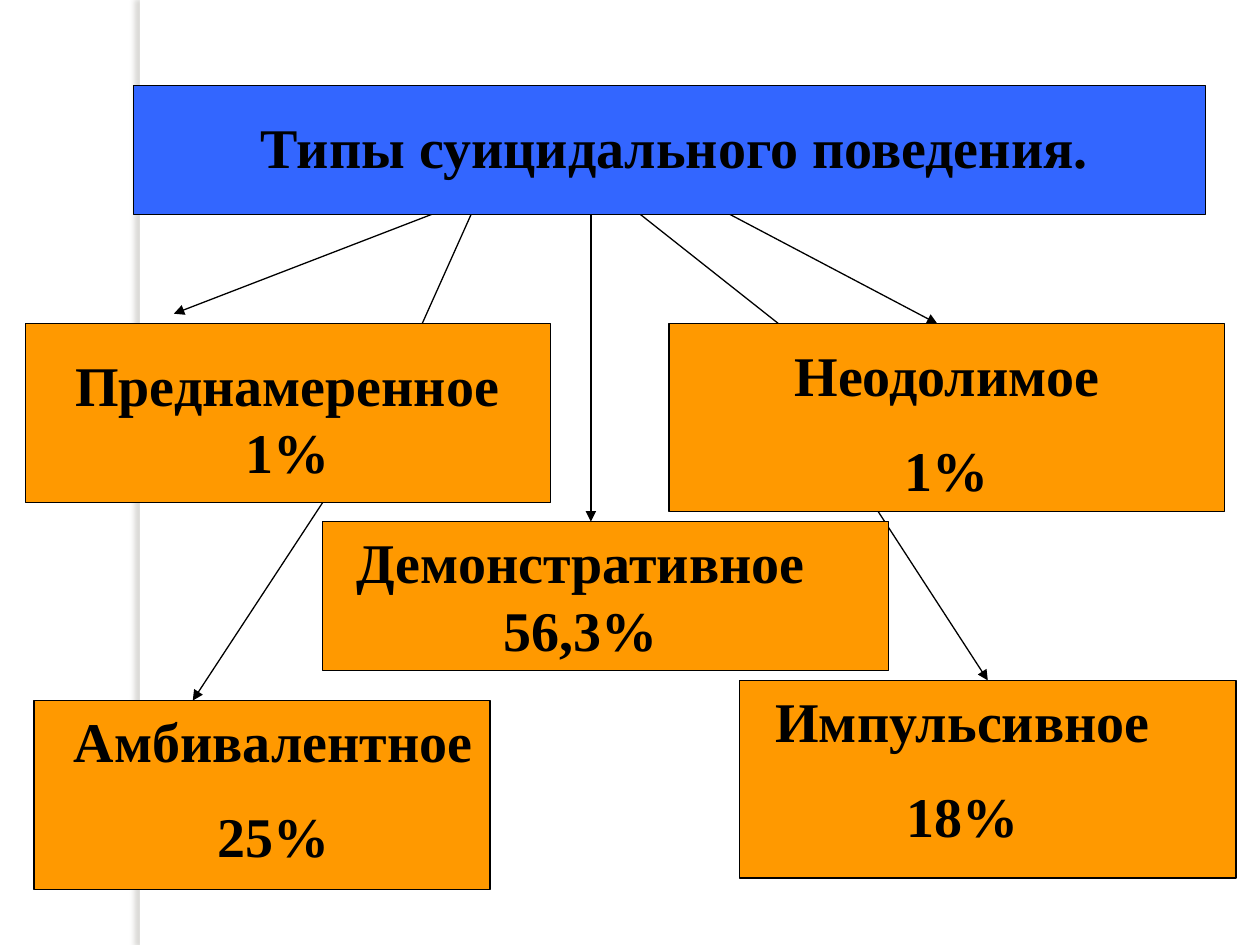
from lxml import etree
from pptx import Presentation
from pptx import util as u
from pptx.dml.color import RGBColor
from pptx.enum import shapes, text
from pptx.oxml import parse_xml
from pptx.oxml.ns import nsdecls, qn

COLORS = {"white": "FFFFFF", "black": "000000", "blue": "3366FF",
          "orange": "FF9900", "shadow": "736F63"}
FONT = "Times New Roman"

presentation = Presentation()
presentation.slide_width = u.Inches(10)
presentation.slide_height = u.Inches(7.5)
slide = presentation.slides.add_slide(presentation.slide_layouts[6])


def add_box(position, fill, outlined=True):
    shape = slide.shapes.add_shape(shapes.MSO_SHAPE.RECTANGLE, *map(u.Inches, position))
    shape.shadow.inherit = False
    shape.fill.solid()
    shape.fill.fore_color.rgb = RGBColor.from_string(COLORS[fill])
    if outlined:
        shape.line.color.rgb = RGBColor.from_string(COLORS["black"])
        shape.line.width = u.Pt(0.75)
    else:
        shape.line.fill.background()
    return shape


def add_label(position, lines):
    label = slide.shapes.add_textbox(*map(u.Inches, position))
    frame = label.text_frame
    frame.word_wrap = True
    frame.auto_size = text.MSO_AUTO_SIZE.SHAPE_TO_FIT_TEXT
    for index, line in enumerate(lines):
        paragraph = frame.paragraphs[0] if index == 0 else frame.add_paragraph()
        paragraph.alignment = text.PP_ALIGN.CENTER
        paragraph.space_before = u.Pt(16)
        run = paragraph.add_run()
        run.text = line
        run.font.name = FONT
        run.font.size = u.Pt(32)
        run.font.bold = True
        run.font.color.rgb = RGBColor.from_string(COLORS["black"])


strip = add_box((1.11, 0, 0.08, 7.5), "white", outlined=False)
strip_effects = strip._element.spPr.find(qn("a:effectLst"))
strip_effects.append(parse_xml(
    f'<a:outerShdw {nsdecls("a")} blurRad="{u.Pt(3)}" dist="{u.Pt(3)}" dir="10800000">'
    f'<a:srgbClr val="{COLORS["shadow"]}"><a:alpha val="25000"/></a:srgbClr></a:outerShdw>'))

connections = [
    ((3.43, 1.7), (1.38, 2.49), True),
    ((5.79, 1.7), (7.44, 2.57), True),
    ((3.74, 1.7), (3.35, 2.57), False),
    ((2.56, 3.99), (1.53, 5.56), True),
    ((5.08, 1.7), (6.18, 2.57), False),
    ((6.97, 4.06), (7.84, 5.4), True),
    ((4.69, 1.7), (4.69, 4.14), True),
]
for start, end, has_arrow in connections:
    connector = slide.shapes.add_connector(
        shapes.MSO_CONNECTOR.STRAIGHT, *map(u.Inches, start + end))
    connector.line.color.rgb = RGBColor.from_string(COLORS["black"])
    connector.line.width = u.Pt(0.75)
    if has_arrow:
        etree.SubElement(connector.line._get_or_add_ln(), qn("a:tailEnd"), type="triangle")
    etree.SubElement(connector._element.spPr, qn("a:effectLst"))

blocks = [
    ((1.06, 0.68, 8.51, 1.02), "blue", (1.22, 0.84, 8.27, 0.63),
     ["Типы суицидального поведения."]),
    ((0.2, 2.57, 4.17, 1.42), "orange", (0.27, 2.73, 4.02, 1.17),
     ["Преднамеренное 1%"]),
    ((5.31, 2.57, 4.41, 1.49), "orange", (5.39, 2.65, 4.25, 1.43),
     ["Неодолимое", "1%"]),
    ((0.27, 5.56, 3.62, 1.5), "orange", (0.2, 5.56, 3.94, 1.43),
     ["Амбивалентное", "25%"]),
    ((5.87, 5.4, 3.94, 1.57), "orange", (5.87, 5.4, 3.54, 1.43),
     ["Импульсивное", "18%"]),
    ((2.56, 4.14, 4.49, 1.18), "orange", (2.56, 4.14, 4.1, 1.17),
     ["Демонстративное 56,3%"]),
]
for box_position, fill, label_position, lines in blocks:
    add_box(box_position, fill)
    add_label(label_position, lines)

presentation.save("out.pptx")
